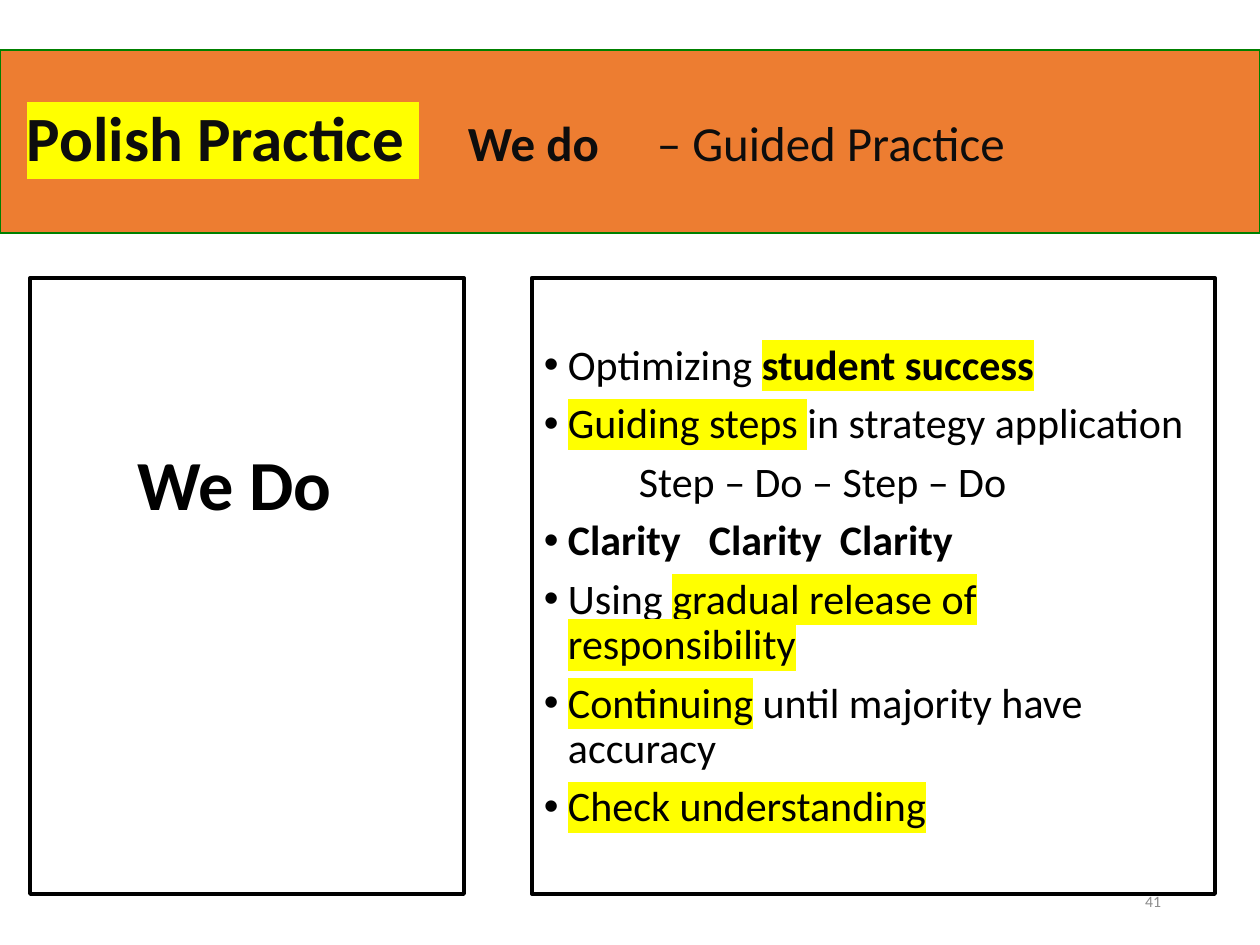
from dataclasses import dataclass

import pptx
import pptx.dml.color
import pptx.enum.shapes
import pptx.enum.text
import pptx.oxml
import pptx.oxml.ns
import pptx.util

ALIGN = pptx.enum.text.PP_ALIGN
ANCHOR = pptx.enum.text.MSO_ANCHOR


@dataclass(frozen=True)
class Theme:
    font: str = "Calibri"
    orange: str = "ED7D31"
    green: str = "008000"
    black: str = "000000"
    ink: str = "0D0D0D"
    gray: str = "8C8C8C"
    yellow: str = "FFFF00"
    title: float = 36
    lead: float = 28
    big: float = 40.2
    body: float = 24
    small: float = 9


@dataclass(frozen=True)
class Run:
    text: str
    size: float
    color: str
    bold: bool = False
    mark: bool = False


@dataclass(frozen=True)
class Para:
    runs: tuple[Run, ...]
    bullet: bool = False
    indent: int = 0
    tabs: tuple[int, ...] = ()
    line: float = 0.9
    align: ALIGN = ALIGN.LEFT


@dataclass(frozen=True)
class Box:
    left: int
    top: int
    width: int
    height: int
    paras: tuple[Para, ...]
    inset: tuple[int, int] = (13, 6)
    anchor: ANCHOR = ANCHOR.TOP
    fill: str = ""
    edge: str = ""
    weight: float = 2.25


THEME = Theme()
HANG = 24


def px(size: int) -> pptx.util.Emu:
    return pptx.util.Emu(round(size * 914400 / 126))


def tint(code: str) -> pptx.dml.color.RGBColor:
    return pptx.dml.color.RGBColor.from_string(code)


def node(tag: str, inner: str = "", **attrs: str):
    extra = " ".join(f'{key}="{value}"' for key, value in attrs.items())
    space = pptx.oxml.ns.nsdecls("a")
    return pptx.oxml.parse_xml(f"<a:{tag} {space} {extra}>{inner}</a:{tag}>")


def body(text: str, bold: bool = False, mark: bool = False) -> Run:
    return Run(text, THEME.body, THEME.black, bold, mark)


def item(*runs: Run, tabs: tuple[int, ...] = ()) -> Para:
    return Para(runs, bullet=True, tabs=tabs)


def write(target, para: Para, first: bool) -> None:
    target.alignment = para.align
    target.line_spacing = para.line
    target.space_before = pptx.util.Pt(0 if first else 7.5)
    props = target._p.get_or_add_pPr()
    if para.bullet:
        props.set("marL", str(px(HANG)))
        props.set("indent", str(-px(HANG)))
        props.append(node("buFont", typeface="Arial"))
        props.append(node("buChar", char="•"))
    else:
        props.set("marL", str(px(para.indent)))
        props.set("indent", "0")
        props.append(node("buNone"))
    if para.tabs:
        stops = "".join(f'<a:tab pos="{px(tab)}" algn="l"/>' for tab in para.tabs)
        props.append(node("tabLst", stops))
    for run in para.runs:
        part = target.add_run()
        part.text = run.text
        font = part.font
        font.name = THEME.font
        font.size = pptx.util.Pt(run.size)
        font.bold = run.bold
        font.color.rgb = tint(run.color)
        if run.mark:
            solid = part._r.rPr.find(pptx.oxml.ns.qn("a:solidFill"))
            solid.addnext(node("highlight", f'<a:srgbClr val="{THEME.yellow}"/>'))


def draw(slide, box: Box) -> None:
    place = [px(n) for n in (box.left, box.top, box.width, box.height)]
    if box.edge:
        kind = pptx.enum.shapes.MSO_SHAPE.RECTANGLE
        shape = slide.shapes.add_shape(kind, *place)
        shape.shadow.inherit = False
        shape.line.color.rgb = tint(box.edge)
        shape.line.width = pptx.util.Pt(box.weight)
        if box.fill:
            shape.fill.solid()
            shape.fill.fore_color.rgb = tint(box.fill)
        else:
            shape.fill.background()
    else:
        shape = slide.shapes.add_textbox(*place)
    frame = shape.text_frame
    frame.word_wrap = True
    frame.vertical_anchor = box.anchor
    frame.margin_left, frame.margin_top = (px(n) for n in box.inset)
    frame.margin_right, frame.margin_bottom = px(13), px(6)
    for index, para in enumerate(box.paras):
        target = frame.add_paragraph() if index else frame.paragraphs[0]
        write(target, para, index == 0)


HEADER = Box(
    0, 50, 1260, 183,
    (Para((
        Run("Polish Practice ", THEME.title, THEME.ink, True, True),
        Run("\t", THEME.title, THEME.ink, True),
        Run("We do\t", THEME.lead, THEME.ink, True),
        Run("– Guided Practice", THEME.lead, THEME.ink),
    ), tabs=(459, 635)),),
    inset=(27, 6), anchor=ANCHOR.MIDDLE,
    fill=THEME.orange, edge=THEME.green, weight=0.75,
)

LABEL = Box(
    30, 278, 434, 616,
    (Para((Run("We Do", THEME.big, THEME.black, True),), line=1.0),),
    inset=(107, 162), edge=THEME.black,
)

POINTS = Box(
    532, 278, 683, 616,
    (
        item(body("Optimizing "), body("student success", True, True)),
        item(body("Guiding steps ", mark=True), body("in strategy application")),
        Para((body("Step – Do – Step – Do"),), indent=95),
        item(body("Clarity\tClarity\tClarity", True), tabs=(165, 296)),
        item(body("Using "), body("gradual release of responsibility", mark=True)),
        item(body("Continuing", mark=True), body(" until majority have accuracy")),
        item(body("Check understanding", mark=True)),
    ),
    inset=(12, 66), edge=THEME.black,
)

NUMBER = Box(
    890, 876, 284, 50,
    (Para((Run("41", THEME.small, THEME.gray),), line=1.0, align=ALIGN.RIGHT),),
    anchor=ANCHOR.MIDDLE,
)


def main() -> None:
    deck = pptx.Presentation()
    deck.slide_width, deck.slide_height = px(1260), px(945)
    slide = deck.slides.add_slide(deck.slide_layouts[6])
    for box in (HEADER, LABEL, POINTS, NUMBER):
        draw(slide, box)
    deck.save("out.pptx")


if __name__ == "__main__":
    main()
